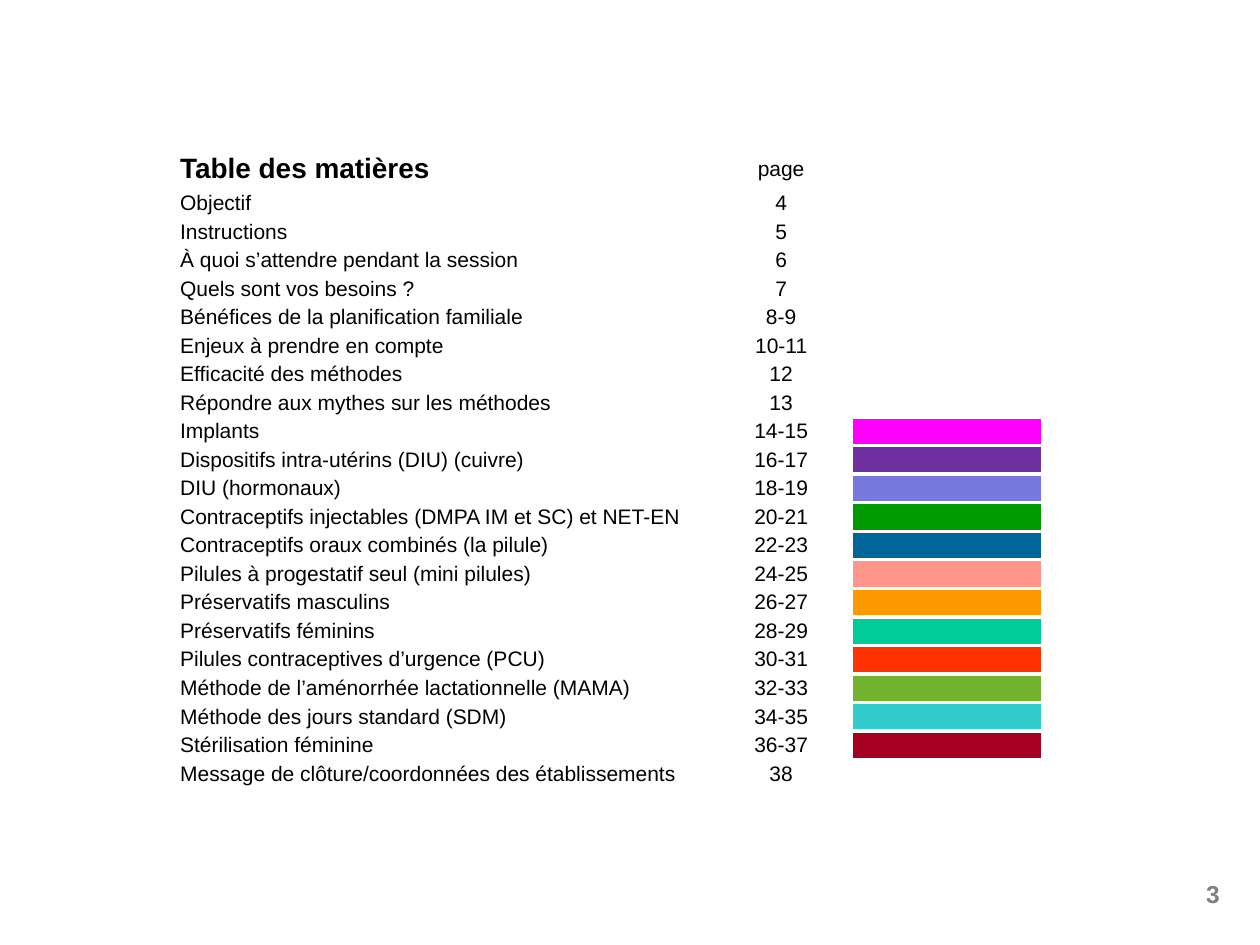
from lxml import etree
from pptx import Presentation
from pptx import util as u
from pptx.dml.color import RGBColor
from pptx.enum import text
from pptx.oxml import ns

BLACK = RGBColor(0, 0, 0)
GREY = RGBColor(0x80, 0x80, 0x80)
MAGENTA = RGBColor(0xFF, 0x00, 0xFF)
PURPLE = RGBColor(0x70, 0x30, 0xA0)
LAVENDER = RGBColor(0x78, 0x78, 0xDE)
GREEN = RGBColor(0x00, 0x99, 0x00)
BLUE = RGBColor(0x00, 0x66, 0x99)
SALMON = RGBColor(0xFF, 0x95, 0x8B)
ORANGE = RGBColor(0xFF, 0x99, 0x00)
MINT = RGBColor(0x00, 0xCC, 0x99)
RED = RGBColor(0xFF, 0x33, 0x00)
LIME = RGBColor(0x74, 0xB3, 0x2F)
TURQUOISE = RGBColor(0x33, 0xCC, 0xCC)
BURGUNDY = RGBColor(0xA5, 0x00, 0x21)

CONTENTS = [
    ("Table des matières", "page", None),
    ("Objectif", "4", None),
    ("Instructions", "5", None),
    ("À quoi s’attendre pendant la session", "6", None),
    ("Quels sont vos besoins ?", "7", None),
    ("Bénéfices de la planification familiale", "8-9", None),
    ("Enjeux à prendre en compte", "10-11", None),
    ("Efficacité des méthodes", "12", None),
    ("Répondre aux mythes sur les méthodes", "13", None),
    ("Implants", "14-15", MAGENTA),
    ("Dispositifs intra-utérins (DIU) (cuivre)", "16-17", PURPLE),
    ("DIU (hormonaux)", "18-19", LAVENDER),
    ("Contraceptifs injectables (DMPA IM et SC) et NET-EN", "20-21", GREEN),
    ("Contraceptifs oraux combinés (la pilule)", "22-23", BLUE),
    ("Pilules à progestatif seul (mini pilules)", "24-25", SALMON),
    ("Préservatifs masculins", "26-27", ORANGE),
    ("Préservatifs féminins", "28-29", MINT),
    ("Pilules contraceptives d’urgence (PCU)", "30-31", RED),
    ("Méthode de l’aménorrhée lactationnelle (MAMA)", "32-33", LIME),
    ("Méthode des jours standard (SDM)", "34-35", TURQUOISE),
    ("Stérilisation féminine", "36-37", BURGUNDY),
    ("Message de clôture/coordonnées des établissements", "38", None),
]


def add_white_borders(cell):
    properties = cell._tc.get_or_add_tcPr()
    for position, side in enumerate(("lnL", "lnR", "lnT", "lnB")):
        line = etree.Element(ns.qn(f"a:{side}"), w=str(u.Pt(2.25)))
        fill = etree.SubElement(line, ns.qn("a:solidFill"))
        etree.SubElement(fill, ns.qn("a:srgbClr"), val="FFFFFF")
        properties.insert(position, line)


def set_font(para, size, color, bold):
    para.font.name = "Arial"
    para.font.size = u.Pt(size)
    para.font.color.rgb = color
    para.font.bold = bold


deck = Presentation()
deck.slide_width, deck.slide_height = u.Inches(10), u.Inches(7.5)
page = deck.slides.add_slide(deck.slide_layouts[6])

number_box = page.shapes.add_textbox(
    u.Inches(7.45), u.Inches(6.93), u.Inches(2.33), u.Inches(0.52))
number_box.text_frame.word_wrap = True
number = number_box.text_frame.paragraphs[0]
number.text = "3"
number.alignment = text.PP_ALIGN.RIGHT
set_font(number, 14, GREY, True)

header_height = u.Inches(0.32)
entries_height = u.Inches(4.76)
table = page.shapes.add_table(
    len(CONTENTS), 3, u.Inches(1.33), u.Inches(1.18),
    u.Inches(6.95), header_height + entries_height).table
table.first_row = False
table.horz_banding = False
for column, width in zip(table.columns, (4.31, 1.12, 1.52)):
    column.width = u.Inches(width)

for index, (heading, pages, color) in enumerate(CONTENTS):
    is_header = index == 0
    row = table.rows[index]
    row.height = header_height if is_header else entries_height // (len(CONTENTS) - 1)
    for column, (cell, words) in enumerate(zip(row.cells, (heading, pages, ""))):
        cell.margin_top = cell.margin_bottom = u.Inches(0.01)
        cell.vertical_anchor = text.MSO_ANCHOR.MIDDLE
        cell.fill.background()
        add_white_borders(cell)
        para = cell.text_frame.paragraphs[0]
        is_title = is_header and column == 0
        set_font(para, 16 if is_title else 12, BLACK, is_title)
        if words:
            para.text = words
        else:
            # An empty cell takes its line height from the end mark
            para._p.get_or_add_endParaRPr().set("sz", "1200")
        if column == 1:
            para.alignment = text.PP_ALIGN.CENTER
    if color is not None:
        swatch = row.cells[2]
        swatch.fill.solid()
        swatch.fill.fore_color.rgb = color

deck.save("out.pptx")
